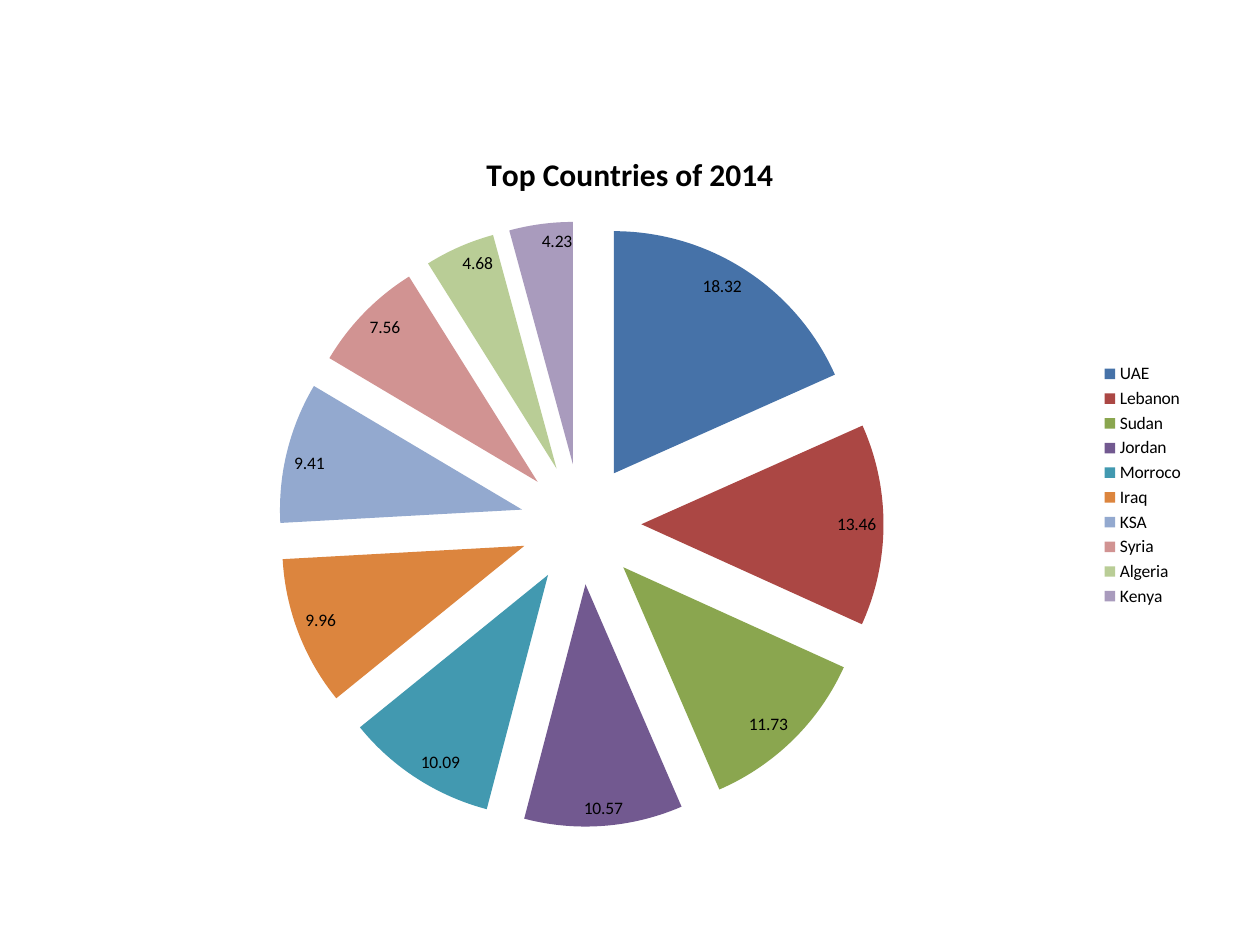
"""Build a slide with an exploded pie chart of the top countries of 2014."""
from pptx import Presentation
from pptx.chart.data import CategoryChartData
from pptx.dml.color import RGBColor
from pptx.enum.chart import XL_CHART_TYPE, XL_LABEL_POSITION, XL_LEGEND_POSITION
from pptx.util import Inches, Pt

TITLE = "Top Countries of 2014"
FONT_NAME = "Calibri"
TEXT_COLOR = "000000"
COUNTRIES = [
    ("UAE", 18.32, "4672A8"),
    ("Lebanon", 13.46, "AB4744"),
    ("Sudan", 11.73, "8AA64F"),
    ("Jordan", 10.57, "725990"),
    ("Morroco", 10.09, "4299B0"),
    ("Iraq", 9.96, "DC853E"),
    ("KSA", 9.41, "93A9CF"),
    ("Syria", 7.56, "D19392"),
    ("Algeria", 4.68, "B9CD96"),
    ("Kenya", 4.23, "A99BBD"),
]


def color(hex_value):
    return RGBColor.from_string(hex_value)


def format_font(font, size=10, bold=False):
    font.name = FONT_NAME
    font.size = Pt(size)
    font.bold = bold
    font.color.rgb = color(TEXT_COLOR)


def set_title(chart, text, **font_format):
    chart.has_title = True
    paragraph = chart.chart_title.text_frame.paragraphs[0]
    run = paragraph.add_run()
    run.text = text
    format_font(run.font, **font_format)
    chart.chart_title.include_in_layout = False


def add_country_chart(slide):
    chart_data = CategoryChartData(number_format="0.00")
    chart_data.categories = [name for name, _, _ in COUNTRIES]
    chart_data.add_series("Series 1", [value for _, value, _ in COUNTRIES])
    chart = slide.shapes.add_chart(
        XL_CHART_TYPE.PIE_EXPLODED, Inches(0.5), Inches(1), Inches(9), Inches(5.7), chart_data
    ).chart
    format_font(chart.font)
    set_title(chart, TITLE, size=18, bold=True)

    chart.has_legend = True
    chart.legend.position = XL_LEGEND_POSITION.RIGHT
    chart.legend.include_in_layout = False
    format_font(chart.legend.font)

    plot = chart.plots[0]
    plot.vary_by_categories = True
    plot.has_data_labels = True
    labels = plot.data_labels
    labels.show_value = True
    labels.show_percentage = False
    labels.number_format = "0.00"
    labels.number_format_is_linked = False
    labels.position = XL_LABEL_POSITION.INSIDE_END
    format_font(labels.font)

    for index, (_, _, fill_color) in enumerate(COUNTRIES):
        fill = plot.series[0].points[index].format.fill
        fill.solid()
        fill.fore_color.rgb = color(fill_color)


def main():
    presentation = Presentation()
    presentation.slide_width = Inches(10)
    presentation.slide_height = Inches(7.5)
    slide = presentation.slides.add_slide(presentation.slide_layouts[6])
    add_country_chart(slide)
    presentation.save("out.pptx")


if __name__ == "__main__":
    main()
